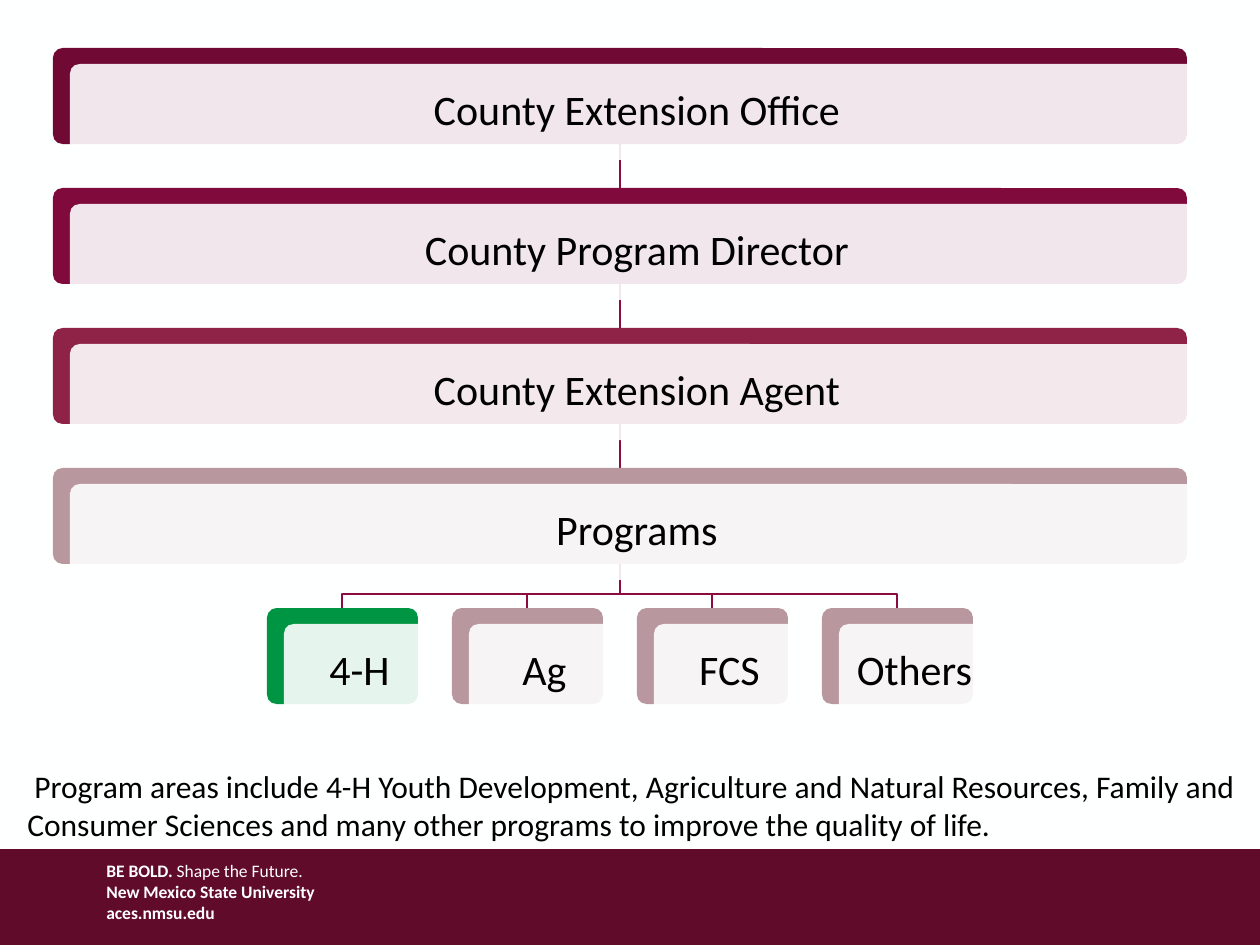
from dataclasses import dataclass

from lxml.etree import SubElement
from pptx import Presentation
from pptx.dml.color import RGBColor
from pptx.enum.shapes import MSO_CONNECTOR, MSO_SHAPE
from pptx.enum.text import MSO_ANCHOR, PP_ALIGN
from pptx.oxml.ns import qn
from pptx.util import Pt

PX = 914400 / 126  # EMU in one px

BACKGROUND = RGBColor(0xFE, 0xFF, 0xFF)
WHITE = RGBColor(0xFF, 0xFF, 0xFF)
BLACK = RGBColor(0x00, 0x00, 0x00)
FOOTER = RGBColor(0x61, 0x0B, 0x2B)
LINK = RGBColor(0x8C, 0x0B, 0x41)
OFFICE = RGBColor(0x70, 0x09, 0x34)
DIRECTOR = RGBColor(0x7F, 0x0A, 0x3B)
AGENT = RGBColor(0x8E, 0x23, 0x47)
PROGRAM = RGBColor(0xB9, 0x97, 0x9E)
GREEN = RGBColor(0x00, 0x95, 0x43)

FONT = "Calibri"
LEVEL_TOP, LEVEL_PITCH, BOX_HEIGHT = 48, 140, 96
LEVEL_LEFT, LEVEL_WIDTH = 53, 1134
BRANCH_LEFT, BRANCH_PITCH, BRANCH_WIDTH = 267, 185, 151
CARD_SHIFT_X, CARD_SHIFT_Y, CARD_INSET = 17, 16, 15
BRANCH_DROP = 30  # from a box down to the horizontal branch line


@dataclass
class Box:
    label: str
    color: RGBColor
    left: int
    top: int
    width: int

    @property
    def center(self) -> int:
        return self.left + self.width // 2

    @property
    def bottom(self) -> int:
        return self.top + BOX_HEIGHT


def emu(px: int) -> int:
    return round(px * PX)


def add_panel(slide, kind, left: int, top: int, width: int, height: int, color: RGBColor):
    shape = slide.shapes.add_shape(kind, emu(left), emu(top), emu(width), emu(height))
    shape.shadow.inherit = False
    shape.fill.solid()
    shape.fill.fore_color.rgb = color
    shape.line.fill.background()
    return shape


def format_runs(paragraph, size: int, color: RGBColor) -> None:
    for run in paragraph.runs:
        run.font.name = FONT
        run.font.size = Pt(size)
        run.font.color.rgb = color


def add_text_box(slide, left: int, top: int, width: int, height: int, text: str):
    text_box = slide.shapes.add_textbox(emu(left), emu(top), emu(width), emu(height))
    text_box.text_frame.word_wrap = True
    text_box.text_frame.text = text
    return text_box.text_frame


def add_box(slide, box: Box) -> None:
    """Coloured box with a translucent labelled card shifted over it."""
    back = add_panel(slide, MSO_SHAPE.ROUNDED_RECTANGLE,
                     box.left, box.top, box.width, BOX_HEIGHT, box.color)
    card = add_panel(slide, MSO_SHAPE.ROUNDED_RECTANGLE, box.left + CARD_SHIFT_X,
                     box.top + CARD_SHIFT_Y, box.width, BOX_HEIGHT, BACKGROUND)
    for shape in (back, card):
        shape.adjustments[0] = 0.1
    fill_color = card.fill._xPr.find(qn("a:solidFill"))[0]
    SubElement(fill_color, qn("a:alpha"), val="90000")

    frame = card.text_frame
    frame.text = box.label
    frame.word_wrap = True
    frame.vertical_anchor = MSO_ANCHOR.MIDDLE
    frame.margin_left = frame.margin_right = emu(CARD_INSET)
    frame.margin_top = frame.margin_bottom = emu(CARD_INSET)
    paragraph = frame.paragraphs[0]
    paragraph.alignment = PP_ALIGN.CENTER
    paragraph.line_spacing = 0.9
    format_runs(paragraph, 24, BLACK)


def style_link(line) -> None:
    line.color.rgb = LINK
    line.width = Pt(1.5)


def add_link(slide, parent: Box, child: Box) -> None:
    """Straight line between stacked boxes, stepped line to a branch."""
    start, end = parent.center, child.center
    if start == end:
        link = slide.shapes.add_connector(MSO_CONNECTOR.STRAIGHT, emu(start),
                                          emu(parent.bottom), emu(end), emu(child.top))
        SubElement(link._element.spPr, qn("a:effectLst"))
    else:
        bend = parent.bottom + BRANCH_DROP
        builder = slide.shapes.build_freeform(start, parent.bottom, scale=PX)
        builder.add_line_segments([(start, bend), (end, bend), (end, child.top)], close=False)
        link = builder.convert_to_shape()
        link.shadow.inherit = False
        link.fill.background()
    style_link(link.line)


def add_footer(slide) -> None:
    add_panel(slide, MSO_SHAPE.RECTANGLE, 0, 849, 1260, 96, FOOTER)
    frame = add_text_box(slide, 94, 854, 363, 90, "BE BOLD. ")
    frame.paragraphs[0].add_run().text = "Shape the Future."
    for text in ("New Mexico State University", "aces.nmsu.edu"):
        frame.add_paragraph().text = text
    for paragraph in frame.paragraphs:
        format_runs(paragraph, 10, WHITE)
        paragraph.runs[0].font.bold = True


def main() -> None:
    presentation = Presentation()
    presentation.slide_width, presentation.slide_height = emu(1260), emu(945)
    slide = presentation.slides.add_slide(presentation.slide_layouts[6])
    slide.background.fill.solid()
    slide.background.fill.fore_color.rgb = BACKGROUND

    add_footer(slide)

    # Program description
    frame = add_text_box(
        slide, 15, 761, 1245, 88,
        " Program areas include 4-H Youth Development, Agriculture and Natural Resources, "
        "Family and Consumer Sciences and many other programs to improve the quality of life.")
    format_runs(frame.paragraphs[0], 18, BLACK)

    # Organization chart: links lie behind the boxes
    level_data = [("County Extension Office", OFFICE), ("County Program Director", DIRECTOR),
                  ("County Extension Agent", AGENT), ("Programs", PROGRAM)]
    levels = [Box(label, color, LEVEL_LEFT, LEVEL_TOP + row * LEVEL_PITCH, LEVEL_WIDTH)
              for row, (label, color) in enumerate(level_data)]
    branch_data = [("4-H", GREEN), ("Ag", PROGRAM), ("FCS", PROGRAM), ("Others", PROGRAM)]
    branch_top = LEVEL_TOP + len(levels) * LEVEL_PITCH
    branches = [Box(label, color, BRANCH_LEFT + column * BRANCH_PITCH, branch_top, BRANCH_WIDTH)
                for column, (label, color) in enumerate(branch_data)]

    for parent, child in zip(levels, levels[1:]):
        add_link(slide, parent, child)
    for branch in branches:
        add_link(slide, levels[-1], branch)
    for box in levels + branches:
        add_box(slide, box)

    presentation.save("out.pptx")


if __name__ == "__main__":
    main()
